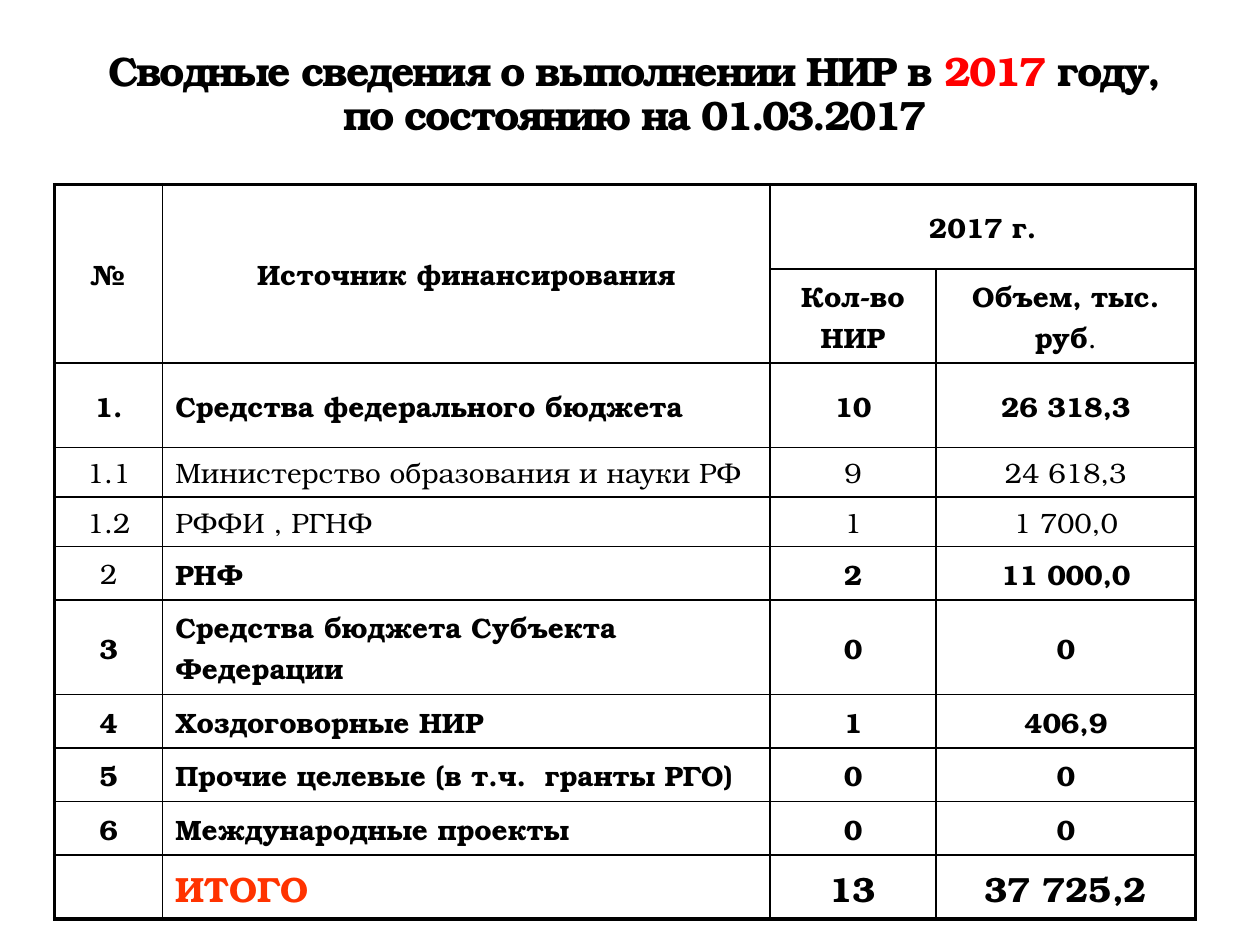
from lxml import etree
from pptx import Presentation
from pptx import util as u
from pptx.dml.color import RGBColor
from pptx.enum import text as t
from pptx.oxml import ns

FONT = "TeX Gyre Bonum"
BLACK = RGBColor(0x00, 0x00, 0x00)
RED = RGBColor(0xFF, 0x00, 0x00)
ORANGE = RGBColor(0xFF, 0x33, 0x00)
THIN, THICK = u.Pt(1), u.Pt(2.25)


def write(frame, *pieces, size=16, bold=True, color=BLACK, align=t.PP_ALIGN.CENTER,
          line=None, before=None, tracking=None):
    """Fill one paragraph; a piece is a string or (string, changed format)."""
    paragraph = frame.paragraphs[0]
    paragraph.alignment = align
    if line:
        paragraph.line_spacing = line
    if before:
        spacing = etree.SubElement(paragraph._p.get_or_add_pPr(), ns.qn("a:spcBef"))
        etree.SubElement(spacing, ns.qn("a:spcPct"), val=str(before * 1000))
    for piece in pieces:
        if piece == "\n":
            paragraph.add_line_break()
            continue
        words, changed = (piece, {}) if isinstance(piece, str) else piece
        run = paragraph.add_run()
        run.text = words
        run.font.name = FONT
        run.font.size = u.Pt(size)
        run.font.bold = changed.get("bold", bold)
        run.font.color.rgb = changed.get("color", color)
        if tracking:
            run._r.get_or_add_rPr().set("spc", str(tracking))


def draw_borders(cell, widths):
    properties = cell._tc.get_or_add_tcPr()
    for side, width in zip("LRTB", widths):
        border = etree.SubElement(properties, ns.qn(f"a:ln{side}"), w=str(width))
        fill = etree.SubElement(border, ns.qn("a:solidFill"))
        etree.SubElement(fill, ns.qn("a:srgbClr"), val=str(BLACK))


deck = Presentation()
deck.slide_width, deck.slide_height = u.Cm(25.4), u.Cm(19.05)
slide = deck.slides.add_slide(deck.slide_layouts[6])

# Title
title = slide.shapes.add_textbox(u.Cm(1.5), u.Cm(0.92), u.Cm(22.6), u.Cm(2)).text_frame
title.word_wrap = True
title.vertical_anchor = t.MSO_ANCHOR.MIDDLE
write(title, "Сводные сведения о выполнении НИР в ", ("2017 ", {"color": RED}), "году,",
      "\n", "по состоянию на 01.03.2017", size=23.4, line=0.9, tracking=-120)

# Funding table: sizes
column_widths = [2.18, 12.24, 3.35, 5.23]
tall, two_lines, plain, strong, total = 1.7, 1.9, 1, 1.08, 1.29
row_heights = [tall, two_lines, tall, plain, plain, strong, two_lines,
               strong, strong, strong, total]
last_row, last_column = len(row_heights) - 1, len(column_widths) - 1
funding = slide.shapes.add_table(
    len(row_heights), len(column_widths), u.Cm(1.1), u.Cm(3.72),
    u.Cm(sum(column_widths)), u.Cm(sum(row_heights))).table
funding.first_row = funding.horz_banding = False
for column, width in zip(funding.columns, column_widths):
    column.width = u.Cm(width)
for row, height in zip(funding.rows, row_heights):
    row.height = u.Cm(height)

# Merged header cells
for first, last in [((0, 0), (1, 0)), ((0, 1), (1, 1)), ((0, 2), (0, 3))]:
    funding.cell(*first).merge(funding.cell(*last))

# Thick frame, thin inner lines
for r in range(last_row + 1):
    for c in range(last_column + 1):
        cell = funding.cell(r, c)
        cell.vertical_anchor = t.MSO_ANCHOR.MIDDLE
        if not cell.is_spanned:
            right = c + (cell.span_width - 1 if cell.is_merge_origin else 0)
            outer = (c == 0, right == last_column, r == 0, r == last_row)
            draw_borders(cell, [THICK if edge else THIN for edge in outer])
        cell.fill.background()

# Header wording
headings = {
    (0, 0): ["№"],
    (0, 1): ["Источник финансирования"],
    (0, 2): ["2017 г."],
    (1, 2): ["Кол-во НИР"],
    (1, 3): ["Объем, тыс. руб", (".", {"bold": False})],
}
for place, heading in headings.items():
    write(funding.cell(*place).text_frame, *heading, before=20)

# Funding sources: number, source, count, amount
sources = [
    ("1.", "Средства федерального бюджета", "10", "26 318,3"),
    ("1.1", "Министерство образования и науки РФ", "9", "24 618,3"),
    ("1.2", "РФФИ , РГНФ", "1", "1 700,0"),
    ("2", "РНФ", "2", "11 000,0"),
    ("3", "Средства бюджета Субъекта Федерации", "0", "0"),
    ("4", "Хоздоговорные НИР", "1", "406,9"),
    ("5", "Прочие целевые (в т.ч.  гранты РГО)", "0", "0"),
    ("6", "Международные проекты", "0", "0"),
    ("", "ИТОГО", "13", "37 725,2"),
]
for r, source in enumerate(sources, start=2):
    number, is_total = source[0], r == last_row
    for c, words in enumerate(source):
        if not words:
            continue
        regular = number in ("1.1", "1.2") or (number == "2" and c == 0)
        write(funding.cell(r, c).text_frame, words, before=20,
              size=20 if is_total else 16, bold=not regular,
              color=ORANGE if is_total and c == 1 else BLACK,
              align=t.PP_ALIGN.LEFT if c == 1 else t.PP_ALIGN.CENTER)

deck.save("out.pptx")
